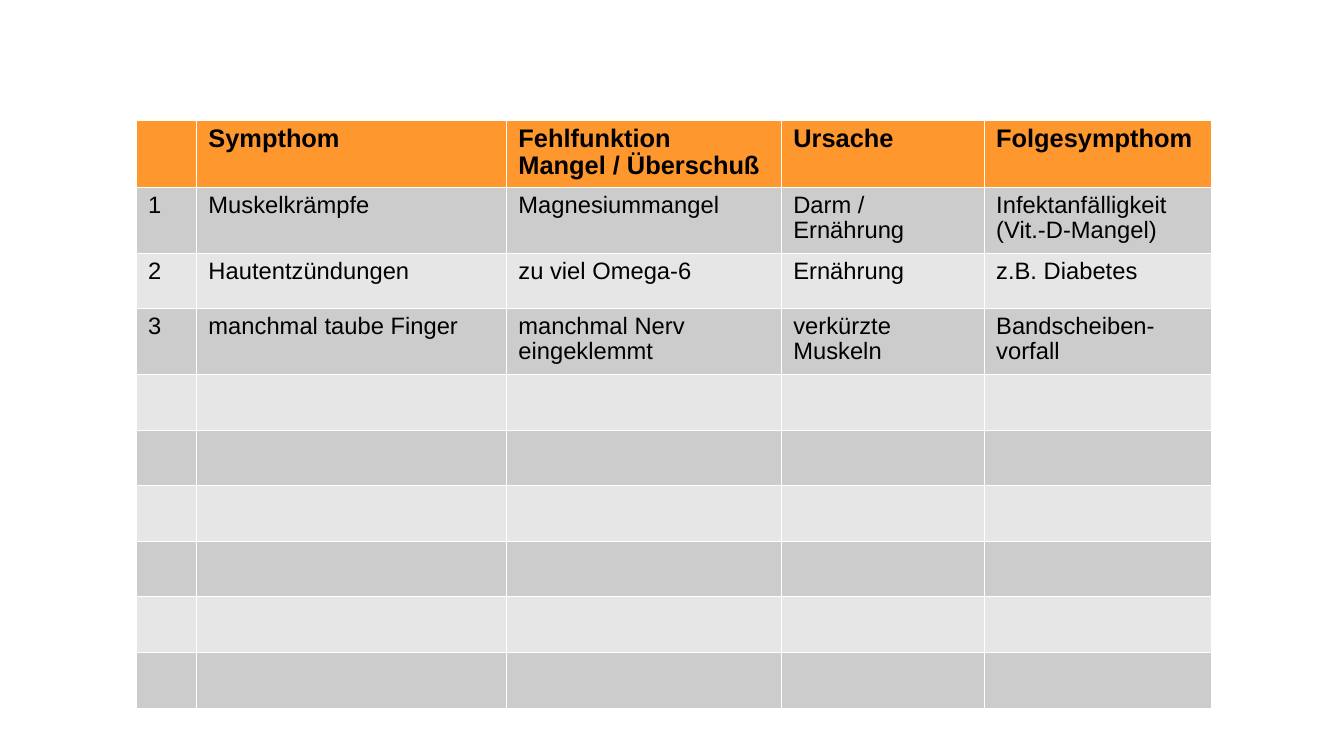
"""Build a slide with a table of symptoms, causes and consequences."""
import pptx
import pptx.dml.color
import pptx.oxml
import pptx.oxml.ns
import pptx.util

Pt = pptx.util.Pt
COLORS = {
    "header": "FF972F",
    "dark": "CCCCCC",
    "light": "E6E6E6",
    "border": "FFFFFF",
    "text": "000000",
}
COLUMN_WIDTHS = [35.7, 183, 162.3, 119.8, 134.2]
ROW_HEIGHTS = [39.5, 39, 32.8, 39] + [32.8] * 6
ENTRIES = [
    ["", "Sympthom", "Fehlfunktion\nMangel / Überschuß", "Ursache", "Folgesympthom"],
    ["1", "Muskelkrämpfe", "Magnesiummangel", "Darm / Ernährung",
     "Infektanfälligkeit (Vit.-D-Mangel)"],
    ["2", "Hautentzündungen", "zu viel Omega-6", "Ernährung", "z.B. Diabetes"],
    ["3", "manchmal taube Finger", "manchmal Nerv eingeklemmt",
     "verkürzte Muskeln", "Bandscheiben-vorfall"],
]


def write_text(cell, text, size=14, bold=False, color=COLORS["text"], spacing=0.95):
    cell.text_frame.text = text
    for paragraph in cell.text_frame.paragraphs:
        paragraph.line_spacing = spacing
        paragraph.font.name = "Arial"
        for run in paragraph.runs:
            run.font.name = "Arial"
            run.font.size = Pt(size)
            run.font.bold = bold
            run.font.color.rgb = pptx.dml.color.RGBColor.from_string(color)


def add_borders(cell, color, width):
    properties = cell._tc.get_or_add_tcPr()
    namespace = pptx.oxml.ns.nsdecls("a")
    for position, side in enumerate(["lnL", "lnR", "lnT", "lnB"]):
        properties.insert(position, pptx.oxml.parse_xml(
            f'<a:{side} {namespace} w="{Pt(width)}"><a:solidFill>'
            f'<a:srgbClr val="{color}"/></a:solidFill></a:{side}>'))


presentation = pptx.Presentation()
presentation.slide_width = Pt(793.44)
presentation.slide_height = Pt(446.4)
slide = presentation.slides.add_slide(presentation.slide_layouts[6])

shape = slide.shapes.add_table(
    len(ROW_HEIGHTS), len(COLUMN_WIDTHS), Pt(80.2), Pt(70.8),
    Pt(sum(COLUMN_WIDTHS)), Pt(sum(ROW_HEIGHTS)))
table = shape.table
for column, width in zip(table.columns, COLUMN_WIDTHS):
    column.width = Pt(width)

for row_index, height in enumerate(ROW_HEIGHTS):
    table.rows[row_index].height = Pt(height)
    is_header = row_index == 0
    fill_name = "header" if is_header else "dark" if row_index % 2 else "light"
    for column_index in range(len(COLUMN_WIDTHS)):
        cell = table.cell(row_index, column_index)
        cell.margin_left = cell.margin_right = Pt(7.2)
        cell.margin_top = cell.margin_bottom = Pt(3.6)
        cell.fill.solid()
        cell.fill.fore_color.rgb = pptx.dml.color.RGBColor.from_string(COLORS[fill_name])
        add_borders(cell, COLORS["border"], 0.06)
        if row_index < len(ENTRIES):
            write_text(cell, ENTRIES[row_index][column_index],
                       size=15 if is_header else 14, bold=is_header)

presentation.save("out.pptx")
